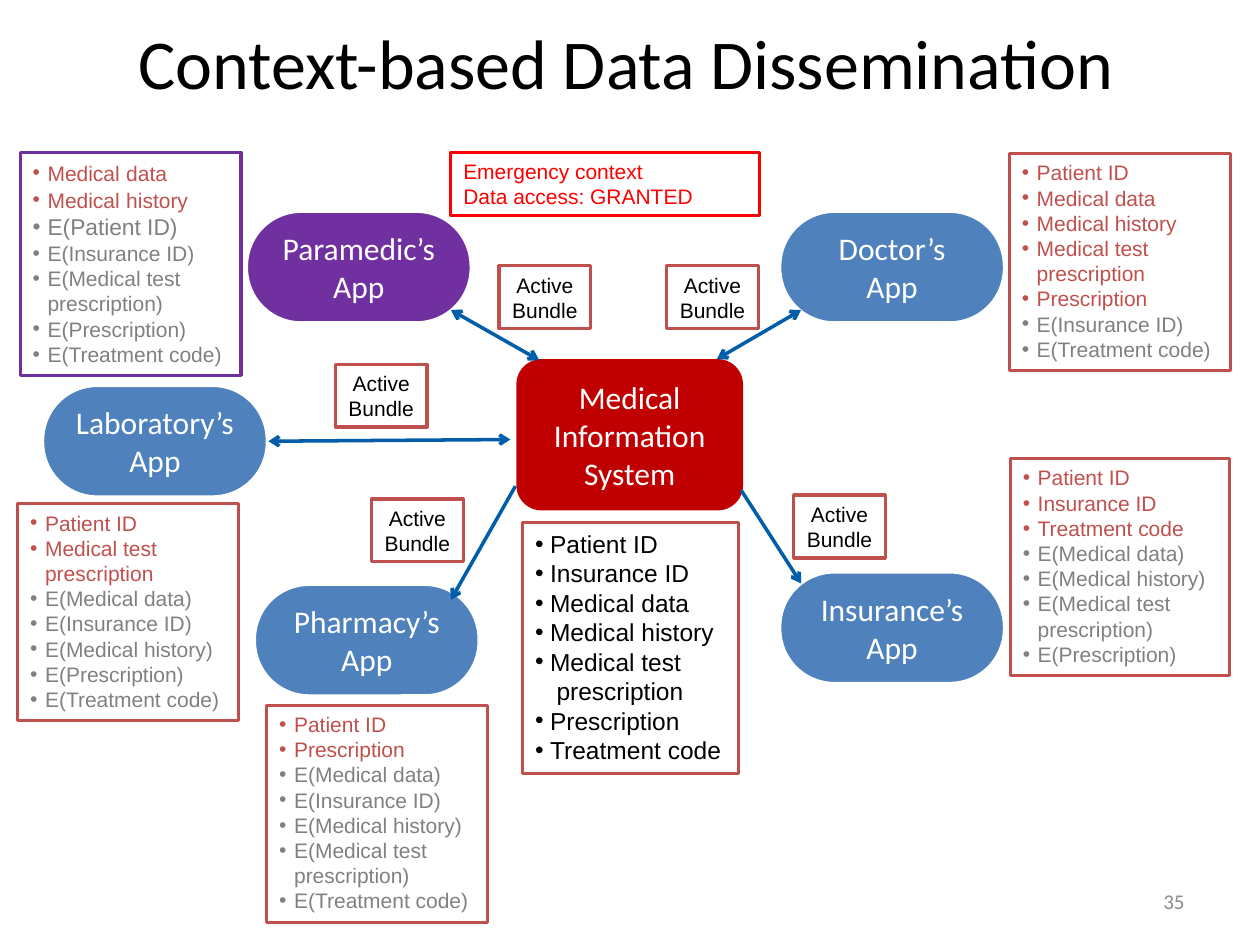
from lxml import etree
from pptx import Presentation
from pptx.dml.color import RGBColor
from pptx.enum.shapes import MSO_CONNECTOR, MSO_SHAPE
from pptx.enum.text import MSO_ANCHOR, PP_ALIGN
from pptx.oxml.ns import qn
from pptx.util import Cm, Pt

ROUNDED = MSO_SHAPE.ROUNDED_RECTANGLE
STRAIGHT = MSO_CONNECTOR.STRAIGHT
LEFT, CENTER, RIGHT = PP_ALIGN.LEFT, PP_ALIGN.CENTER, PP_ALIGN.RIGHT
TOP, MIDDLE = MSO_ANCHOR.TOP, MSO_ANCHOR.MIDDLE

BLACK = RGBColor(0x00, 0x00, 0x00)
WHITE = RGBColor(0xFF, 0xFF, 0xFF)
RED = RGBColor(0xFF, 0x00, 0x00)
DARK_RED = RGBColor(0xC0, 0x00, 0x00)
BRICK = RGBColor(0xC0, 0x50, 0x4D)
PURPLE = RGBColor(0x70, 0x30, 0xA0)
BLUE = RGBColor(0x4F, 0x81, 0xBD)
ARROW_BLUE = RGBColor(0x00, 0x5D, 0xAA)
GRAY = RGBColor(0x80, 0x80, 0x80)
NUMBER_GRAY = RGBColor(0x8C, 0x8C, 0x8C)

HEADING_FONT, BODY_FONT = "Calibri", "Arial"
RIGHT_SIDE = 3


class DiagramSlide:
    app_size = (4.57, 2.29)
    label_size = (1.85, 1.27)
    indent = 0.3

    def __init__(self, presentation):
        self.slide = presentation.slides.add_slide(presentation.slide_layouts[5])

    def format_text(self, shape, size, color, font, align=LEFT, anchor=TOP, margin=None):
        text_frame = shape.text_frame
        text_frame.vertical_anchor = anchor
        if margin is not None:
            text_frame.margin_left = text_frame.margin_right = Cm(margin)
            text_frame.margin_top = text_frame.margin_bottom = Cm(margin)
        for paragraph in text_frame.paragraphs:
            paragraph.alignment = align
            for run in paragraph.runs:
                self.format_run(run, size, color, font)

    def format_run(self, run, size, color, font=BODY_FONT):
        run.font.size = Pt(size)
        run.font.name = font
        run.font.color.rgb = color

    def title(self, text, left, top, width, height):
        shape = self.slide.shapes.title
        shape.left, shape.top = Cm(left), Cm(top)
        shape.width, shape.height = Cm(width), Cm(height)
        shape.text_frame.text = text
        self.format_text(shape, 40, BLACK, HEADING_FONT, CENTER, MIDDLE, 0)

    def node(self, text, left, top, width, height, fill, margin):
        shape = self.slide.shapes.add_shape(ROUNDED, Cm(left), Cm(top), Cm(width), Cm(height))
        shape.shadow.inherit = False
        shape.fill.solid()
        shape.fill.fore_color.rgb = fill
        shape.line.fill.background()
        shape.text_frame.text = text
        self.format_text(shape, 18, WHITE, HEADING_FONT, CENTER, MIDDLE, margin)
        return shape

    def app(self, owner, left, top, fill=BLUE):
        shape = self.node(f"{owner}\nApp", left, top, *self.app_size, fill, 0.05)
        shape.adjustments[0] = 0.49
        shape.line.color.rgb = WHITE
        shape.line.width = Pt(3)
        return shape

    def text_box(self, text, left, top, width, height, border=None):
        shape = self.slide.shapes.add_textbox(Cm(left), Cm(top), Cm(width), Cm(height))
        shape.text_frame.word_wrap = True
        shape.text_frame.text = text
        if border is not None:
            shape.line.color.rgb = border
            shape.line.width = Pt(1.75)
        return shape

    def bundle_label(self, left, top):
        shape = self.text_box("Active\nBundle", left, top, *self.label_size, BRICK)
        shape.text_frame.word_wrap = False
        self.format_text(shape, 12, BLACK, BODY_FONT, CENTER)

    def bullet(self, paragraph):
        properties = paragraph._p.get_or_add_pPr()
        properties.set("marL", str(Cm(self.indent)))
        properties.set("indent", str(-Cm(self.indent)))
        etree.SubElement(properties, qn("a:buFont")).set("typeface", "Arial")
        etree.SubElement(properties, qn("a:buChar")).set("char", "•")

    def data_list(self, items, left, top, width=4.45, height=4.37, border=BRICK):
        shape = self.text_box("\n".join(items), left, top, width, height, border)
        for paragraph in shape.text_frame.paragraphs:
            color = GRAY if paragraph.text.startswith("E(") else BRICK
            self.bullet(paragraph)
            for run in paragraph.runs:
                self.format_run(run, 12, color)
        return shape.text_frame.paragraphs

    def widen_space(self, paragraph):
        first, second = paragraph.text.split(" ")
        paragraph.text = first
        paragraph.add_run().text = " "
        paragraph.add_run().text = second
        for run, size in zip(paragraph.runs, (12, 13, 12)):
            self.format_run(run, size, BRICK)

    def arrow(self, start, end, both=False):
        points = [Cm(value) for value in (*start, *end)]
        connector = self.slide.shapes.add_connector(STRAIGHT, *points)
        connector.line.color.rgb = ARROW_BLUE
        connector.line.width = Pt(2)
        line = connector.line._get_or_add_ln()
        for name in ("a:headEnd", "a:tailEnd") if both else ("a:tailEnd",):
            etree.SubElement(line, qn(name)).set("type", "arrow")
        etree.SubElement(connector._element.spPr, qn("a:effectLst"))
        return connector


def main():
    presentation = Presentation()
    presentation.slide_width, presentation.slide_height = Cm(25.4), Cm(19.05)
    diagram = DiagramSlide(presentation)
    diagram.title("Context-based Data Dissemination", 1.19, 0.08, 22.86, 2.34)

    diagram.app("Pharmacy’s", 5.11, 11.76)
    diagram.app("Insurance’s", 15.7, 11.51)
    diagram.app("Doctor’s", 15.7, 4.24)
    diagram.app("Paramedic’s", 4.95, 4.24, PURPLE)
    laboratory = diagram.app("Laboratory’s", 0.84, 7.75)
    diagram.node("Medical\nInformation\nSystem", 10.41, 7.24, 4.57, 3.05, DARK_RED, 0.13)

    diagram.arrow((9.09, 6.25), (10.87, 7.26), both=True)
    diagram.arrow((16.15, 6.25), (14.45, 7.24), both=True)
    diagram.arrow((14.94, 9.88), (16.15, 11.76))
    diagram.arrow((10.39, 9.8), (9.09, 12.09))
    laboratory_arrow = diagram.arrow((5.41, 8.89), (10.29, 8.86), both=True)
    laboratory_arrow.begin_connect(laboratory, RIGHT_SIDE)

    for left, top in ((6.76, 7.34), (7.49, 10.06), (13.44, 5.36), (10.06, 5.36), (16, 9.98)):
        diagram.bundle_label(left, top)

    record = diagram.text_box(
        "Patient ID\nInsurance ID\nMedical data\nMedical history\nMedical test\n"
        "prescription\nPrescription\nTreatment code", 10.54, 10.54, 4.34, 5.05, BRICK)
    diagram.format_text(record, 14, BLACK, BODY_FONT)
    for paragraph in record.text_frame.paragraphs:
        if paragraph.text == "prescription":
            paragraph._p.get_or_add_pPr().set("marL", str(Cm(0.43)))
        else:
            diagram.bullet(paragraph)

    paramedic_items = diagram.data_list(
        ["Medical data", "Medical history", "E(Patient ID)", "E(Insurance ID)",
         "E(Medical test prescription)", "E(Prescription)", "E(Treatment code)"],
        0.41, 3.07, height=4.5, border=PURPLE)
    for paragraph in paramedic_items[:2]:
        diagram.widen_space(paragraph)
    paramedic_items[2].runs[0].font.size = Pt(13)
    diagram.data_list(
        ["Patient ID", "Medical data", "Medical history", "Medical test prescription",
         "Prescription", "E(Insurance ID)", "E(Treatment code)"], 20.35, 3.1)
    diagram.data_list(
        ["Patient ID", "Medical test prescription", "E(Medical data)", "E(Insurance ID)",
         "E(Medical history)", "E(Prescription)", "E(Treatment code)"], 0.36, 10.16)
    diagram.data_list(
        ["Patient ID", "Prescription", "E(Medical data)", "E(Insurance ID)",
         "E(Medical history)", "E(Medical test prescription)", "E(Treatment code)"], 5.38, 14.22)
    diagram.data_list(
        ["Patient ID", "Insurance ID", "Treatment code", "E(Medical data)",
         "E(Medical history)", "E(Medical test prescription)", "E(Prescription)"],
        20.37, 9.25, width=4.42)

    context = diagram.text_box(
        "Emergency context\nData access: GRANTED", 9.09, 3.07, 6.22, 1.27, RED)
    diagram.format_text(context, 12, RED, BODY_FONT)
    number = diagram.text_box("35", 18.21, 17.65, 5.92, 1.02)
    diagram.format_text(number, 12, NUMBER_GRAY, HEADING_FONT, RIGHT, MIDDLE)

    presentation.save("out.pptx")


if __name__ == "__main__":
    main()
